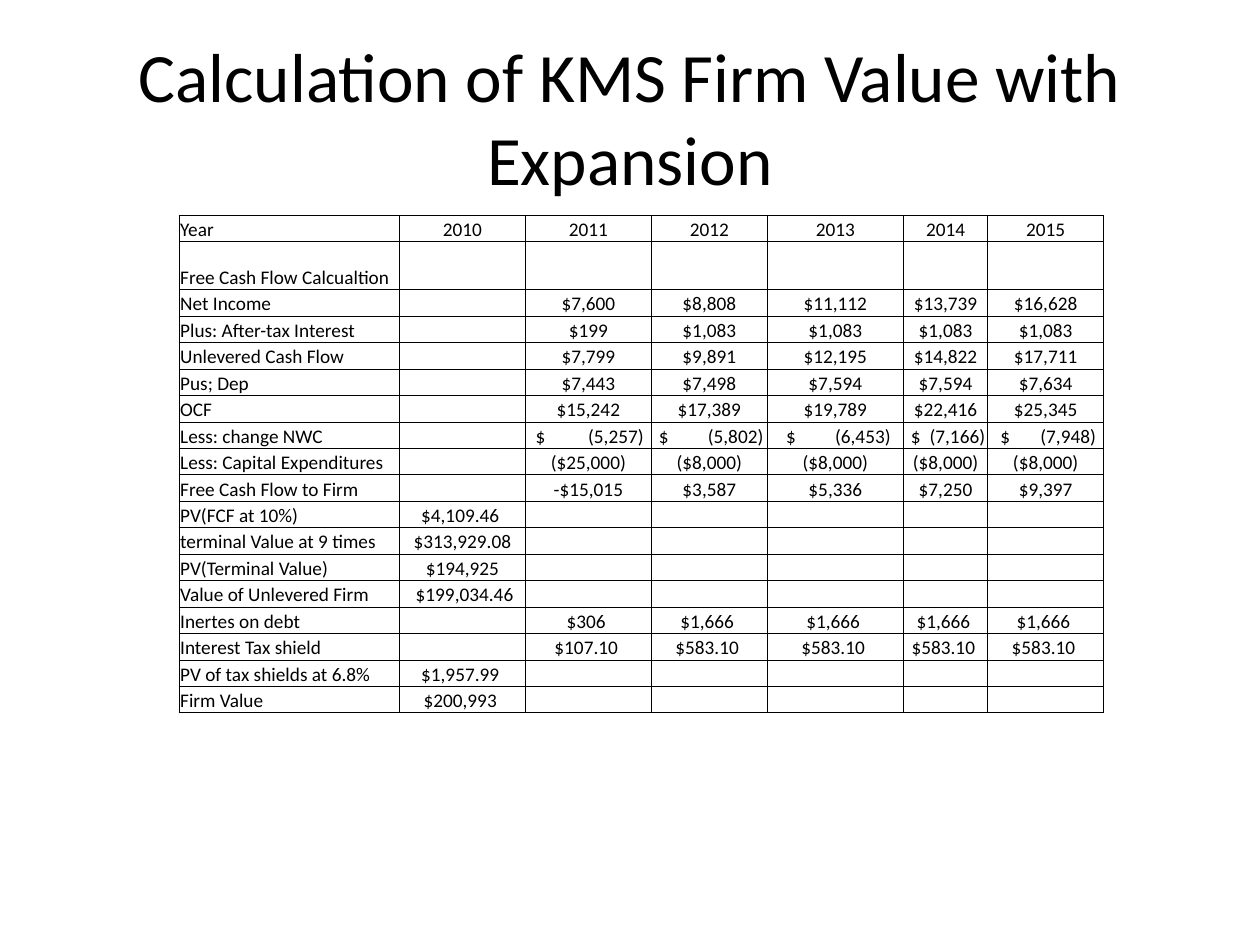
from lxml.etree import SubElement
from pptx import Presentation
from pptx.dml.color import RGBColor
from pptx.enum.text import MSO_ANCHOR, PP_ALIGN
from pptx.oxml.ns import qn
from pptx.util import Inches, Pt

BLACK = RGBColor(0x00, 0x00, 0x00)
FONT = "Calibri"
TITLE_SIZE, CELL_SIZE = 39.6, 11
BORDER_WIDTH = 0.5
INSET = 0.01
COLUMN_WIDTHS = [1.75, 1, 1, 0.92, 1.08, 0.67, 0.92]
ROW_HEIGHT, HEADING_HEIGHT = 0.21, 0.38
HEADING_ROW = 1
ACCOUNTING_SPANS = {2: (0.08, 0.94), 3: (0.06, 0.89), 4: (0.15, 0.98),
                    5: (0.06, 0.65), 6: (0.1, 0.86)}
CASH_FLOWS = [
    ["Year", "2010", "2011", "2012", "2013", "2014", "2015"],
    ["Free Cash Flow Calcualtion"],
    ["Net Income", "", "$7,600", "$8,808", "$11,112", "$13,739", "$16,628"],
    ["Plus: After-tax Interest", "", "$199"] + ["$1,083"] * 4,
    ["Unlevered Cash Flow", "", "$7,799", "$9,891", "$12,195", "$14,822", "$17,711"],
    ["Pus; Dep", "", "$7,443", "$7,498", "$7,594", "$7,594", "$7,634"],
    ["OCF", "", "$15,242", "$17,389", "$19,789", "$22,416", "$25,345"],
    ["Less: change NWC", "", "$\t(5,257)", "$\t(5,802)", "$\t(6,453)",
     "$\t(7,166)", "$\t(7,948)"],
    ["Less: Capital Expenditures", "", "($25,000)"] + ["($8,000)"] * 4,
    ["Free Cash Flow to Firm", "", "-$15,015", "$3,587", "$5,336", "$7,250", "$9,397"],
    ["PV(FCF at 10%)", "$4,109.46 "],
    ["terminal Value at 9 times", "$313,929.08"],
    ["PV(Terminal Value)", "$194,925"],
    ["Value of Unlevered Firm", " $199,034.46"],
    ["Inertes on debt", "", "$306 "] + ["$1,666 "] * 4,
    ["Interest Tax shield", "", "$107.10 "] + ["$583.10 "] * 4,
    ["PV of tax shields at 6.8%", "$1,957.99 "],
    ["Firm Value", "$200,993 "],
]


def add_span(para, text, size):
    """Add one run of black text to a paragraph."""
    span = para.add_run()
    span.text = text
    span.font.name = FONT
    span.font.size = Pt(size)
    span.font.color.rgb = BLACK


def add_title(page, deck, text):
    """Add the centred title across the top of the page."""
    box = page.shapes.add_textbox(
        int(deck.slide_width * 0.05), int(deck.slide_height * 0.04),
        int(deck.slide_width * 0.9), Inches(1.25))
    frame = box.text_frame
    frame.word_wrap = True
    frame.vertical_anchor = MSO_ANCHOR.MIDDLE
    para = frame.paragraphs[0]
    para.alignment = PP_ALIGN.CENTER
    add_span(para, text, TITLE_SIZE)


def set_borders(cell):
    """Draw a thin black line on all four sides of a cell."""
    properties = cell._tc.get_or_add_tcPr()
    for side in ("a:lnL", "a:lnR", "a:lnT", "a:lnB"):
        line = SubElement(properties, qn(side), w=str(Pt(BORDER_WIDTH)))
        fill = SubElement(line, qn("a:solidFill"))
        SubElement(fill, qn("a:srgbClr"), val=str(BLACK))


def set_accounting_tab(cell, para, column):
    """Put the dollar sign at the left and the amount at a right tab stop."""
    start, end = ACCOUNTING_SPANS[column]
    cell.margin_left = Inches(start)
    para.alignment = PP_ALIGN.LEFT
    tabs = SubElement(para._p.get_or_add_pPr(), qn("a:tabLst"))
    SubElement(tabs, qn("a:tab"), pos=str(Inches(end - start)), algn="r")


def fill_cell(cell, column, text):
    """Style one cell and write its text."""
    cell.margin_left = cell.margin_right = cell.margin_top = Inches(INSET)
    cell.margin_bottom = 0
    cell.vertical_anchor = MSO_ANCHOR.BOTTOM
    set_borders(cell)
    cell.fill.background()
    para = cell.text_frame.paragraphs[0]
    para.alignment = PP_ALIGN.CENTER if column else PP_ALIGN.LEFT
    if "\t" in text:
        set_accounting_tab(cell, para, column)
    if text:
        add_span(para, text, CELL_SIZE)
    else:
        SubElement(para._p, qn("a:endParaRPr"), sz=str(CELL_SIZE * 100))


def add_cash_flow_table(page, left, top):
    """Add the table of cash flows and firm values."""
    heights = [HEADING_HEIGHT if row == HEADING_ROW else ROW_HEIGHT
               for row in range(len(CASH_FLOWS))]
    table = page.shapes.add_table(
        len(heights), len(COLUMN_WIDTHS), Inches(left), Inches(top),
        Inches(sum(COLUMN_WIDTHS)), Inches(sum(heights))).table
    table.first_row = table.horz_banding = False
    for column, width in zip(table.columns, COLUMN_WIDTHS):
        column.width = Inches(width)
    for row, (height, texts) in enumerate(zip(heights, CASH_FLOWS)):
        table.rows[row].height = Inches(height)
        padded = texts + [""] * (len(COLUMN_WIDTHS) - len(texts))
        for column, text in enumerate(padded):
            fill_cell(table.cell(row, column), column, text)


def main():
    """Build the slide and save it."""
    deck = Presentation()
    deck.slide_width, deck.slide_height = Inches(10), Inches(7.5)
    page = deck.slides.add_slide(deck.slide_layouts[6])
    add_title(page, deck, "Calculation of KMS Firm Value with Expansion")
    add_cash_flow_table(page, 1.42, 1.71)
    deck.save("out.pptx")


if __name__ == "__main__":
    main()
